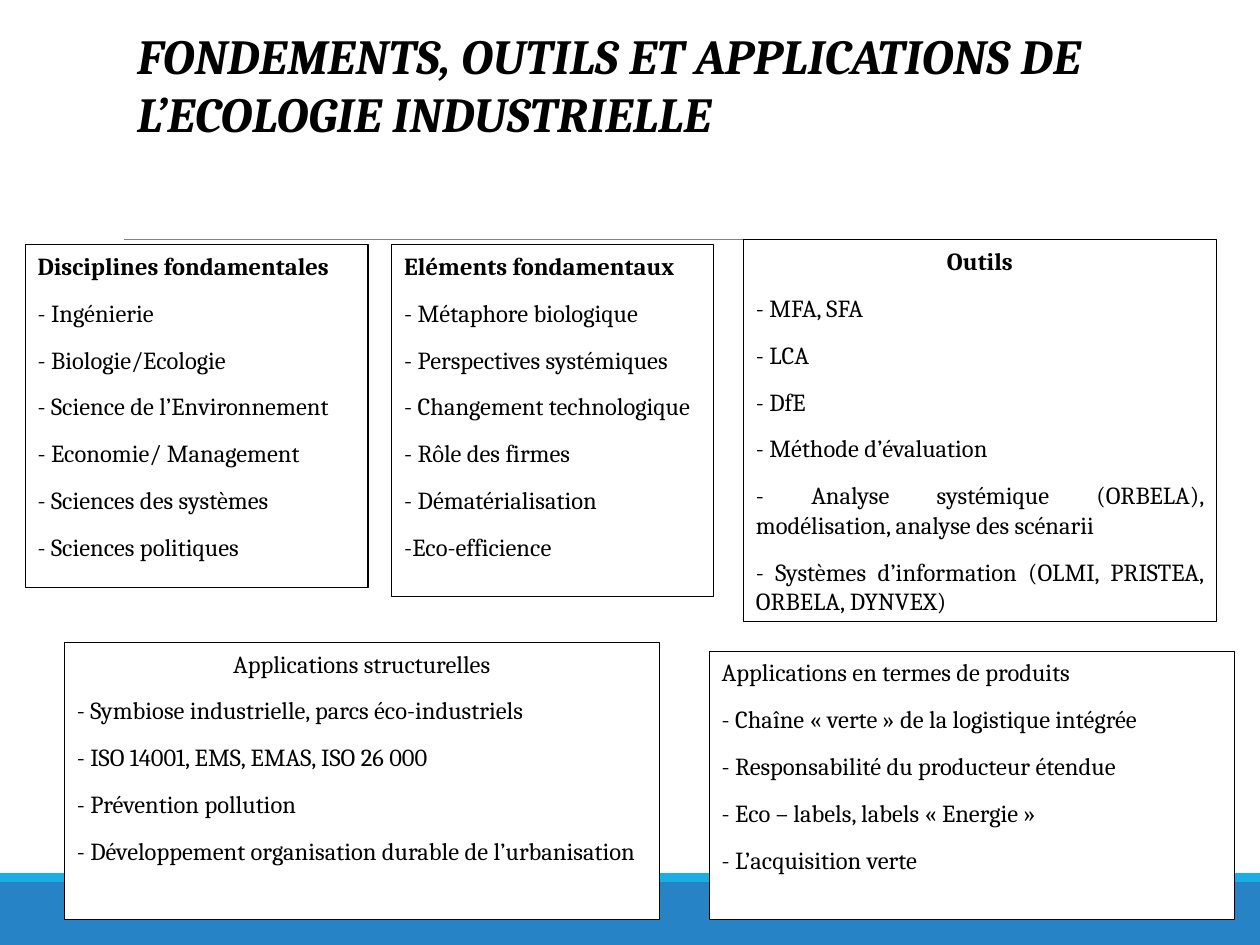
from dataclasses import dataclass

from pptx import Presentation
from pptx.dml.color import RGBColor
from pptx.enum import shapes, text
from pptx.oxml.ns import qn
from pptx.util import Cm, Pt

LEFT, CENTER, JUSTIFY = text.PP_ALIGN.LEFT, text.PP_ALIGN.CENTER, text.PP_ALIGN.JUSTIFY


@dataclass(frozen=True)
class Theme:
    font: str = "Cambria"
    ink: RGBColor = RGBColor(0, 0, 0)
    paper: RGBColor = RGBColor(255, 255, 255)
    rule: RGBColor = RGBColor(0x80, 0x80, 0x80)
    band: RGBColor = RGBColor(0x26, 0x83, 0xC6)
    stripe: RGBColor = RGBColor(0x1C, 0xAD, 0xE4)
    title: Pt = Pt(28)
    body: Pt = Pt(14)
    gap: Pt = Pt(10)
    border: Pt = Pt(0.75)
    hairline: Pt = Pt(0.5)


@dataclass(frozen=True)
class Card:
    box: tuple
    heading: str
    items: tuple
    bold: bool = False
    heading_align: text.PP_ALIGN = LEFT
    item_align: text.PP_ALIGN = LEFT


THEME = Theme()
WIDTH, HEIGHT = 25.4, 19.05

CARDS = (
    Card((0.51, 4.93, 6.91, 6.91), "Disciplines fondamentales", (
        "- Ingénierie",
        "- Biologie/Ecologie",
        "- Science de l’Environnement",
        "- Economie/ Management",
        "- Sciences des systèmes",
        "- Sciences politiques",
    ), bold=True),
    Card((7.9, 4.93, 6.48, 7.09), "Eléments fondamentaux", (
        "- Métaphore biologique",
        "- Perspectives systémiques",
        "- Changement technologique",
        "- Rôle des firmes",
        "- Dématérialisation",
        "-Eco-efficience",
    ), bold=True),
    Card((14.99, 4.83, 9.53, 7.7), "Outils", (
        "- MFA, SFA",
        "- LCA",
        "- DfE",
        "- Méthode d’évaluation",
        "- Analyse systémique (ORBELA), modélisation, analyse des scénarii",
        "- Systèmes d’information (OLMI, PRISTEA, ORBELA, DYNVEX)",
    ), bold=True, heading_align=CENTER, item_align=JUSTIFY),
    Card((1.3, 12.95, 11.99, 5.59), "Applications structurelles", (
        "- Symbiose industrielle, parcs éco-industriels",
        "- ISO 14001, EMS, EMAS, ISO 26 000",
        "- Prévention pollution",
        "- Développement organisation durable de l’urbanisation",
    ), heading_align=CENTER),
    Card((14.3, 13.13, 10.59, 5.41), "Applications en termes de produits", (
        "- Chaîne « verte » de la logistique intégrée",
        "- Responsabilité du producteur étendue",
        "- Eco – labels, labels « Energie »",
        "- L’acquisition verte",
    )),
)


def place(sp, box):
    sp.left, sp.top, sp.width, sp.height = (Cm(v) for v in box)


def style_text(p, size, bold=False, italic=False):
    for r in p.runs:
        r.font.name = THEME.font
        r.font.size = size
        r.font.bold = bold
        r.font.italic = italic
        r.font.color.rgb = THEME.ink


def add_rect(s, box, fill):
    sp = s.shapes.add_shape(shapes.MSO_SHAPE.RECTANGLE, *(Cm(v) for v in box))
    sp.shadow.inherit = False
    sp.fill.solid()
    sp.fill.fore_color.rgb = fill
    sp.line.fill.background()
    return sp


def add_footer(s, box):
    left, top, width, height = box
    stripe = 0.18
    add_rect(s, (left, top + stripe, width, height - stripe), THEME.band)
    add_rect(s, (left, top, width, stripe), THEME.stripe)


def add_rule(s, box):
    left, top, width, height = box
    line = s.shapes.add_connector(shapes.MSO_CONNECTOR.STRAIGHT, Cm(left), Cm(top),
                                  Cm(left + width), Cm(top + height))
    line.line.color.rgb = THEME.rule
    line.line.width = THEME.hairline
    sp_pr = line._element.spPr
    sp_pr.append(sp_pr.makeelement(qn("a:effectLst"), {}))


def add_title(s, box, title):
    sp = s.shapes.title
    place(sp, box)
    tf = sp.text_frame
    tf.text = title
    tf.word_wrap = True
    tf.auto_size = text.MSO_AUTO_SIZE.NONE
    tf.vertical_anchor = text.MSO_ANCHOR.TOP
    p = tf.paragraphs[0]
    p.alignment = LEFT
    style_text(p, THEME.title, bold=True, italic=True)


def add_card(s, card):
    sp = add_rect(s, card.box, THEME.paper)
    sp.line.color.rgb = THEME.ink
    sp.line.width = THEME.border
    tf = sp.text_frame
    tf.word_wrap = True
    tf.vertical_anchor = text.MSO_ANCHOR.TOP
    tf.text = "\n".join((card.heading, *card.items))
    for i, p in enumerate(tf.paragraphs):
        p.alignment = card.item_align if i else card.heading_align
        p.space_after = THEME.gap
        style_text(p, THEME.body, bold=card.bold and i == 0)


def main():
    prs = Presentation()
    prs.slide_width, prs.slide_height = Cm(WIDTH), Cm(HEIGHT)
    s = prs.slides.add_slide(prs.slide_layouts[5])
    add_footer(s, (0, 17.6, WIDTH, HEIGHT - 17.6))
    add_rule(s, (2.49, 4.83, 20.75, 0))
    for card in CARDS:
        add_card(s, card)
    add_title(s, (2.51, 0.38, 20.02, 3.84),
              "FONDEMENTS, OUTILS ET APPLICATIONS DE L’ECOLOGIE INDUSTRIELLE")
    prs.save("out.pptx")


if __name__ == "__main__":
    main()
